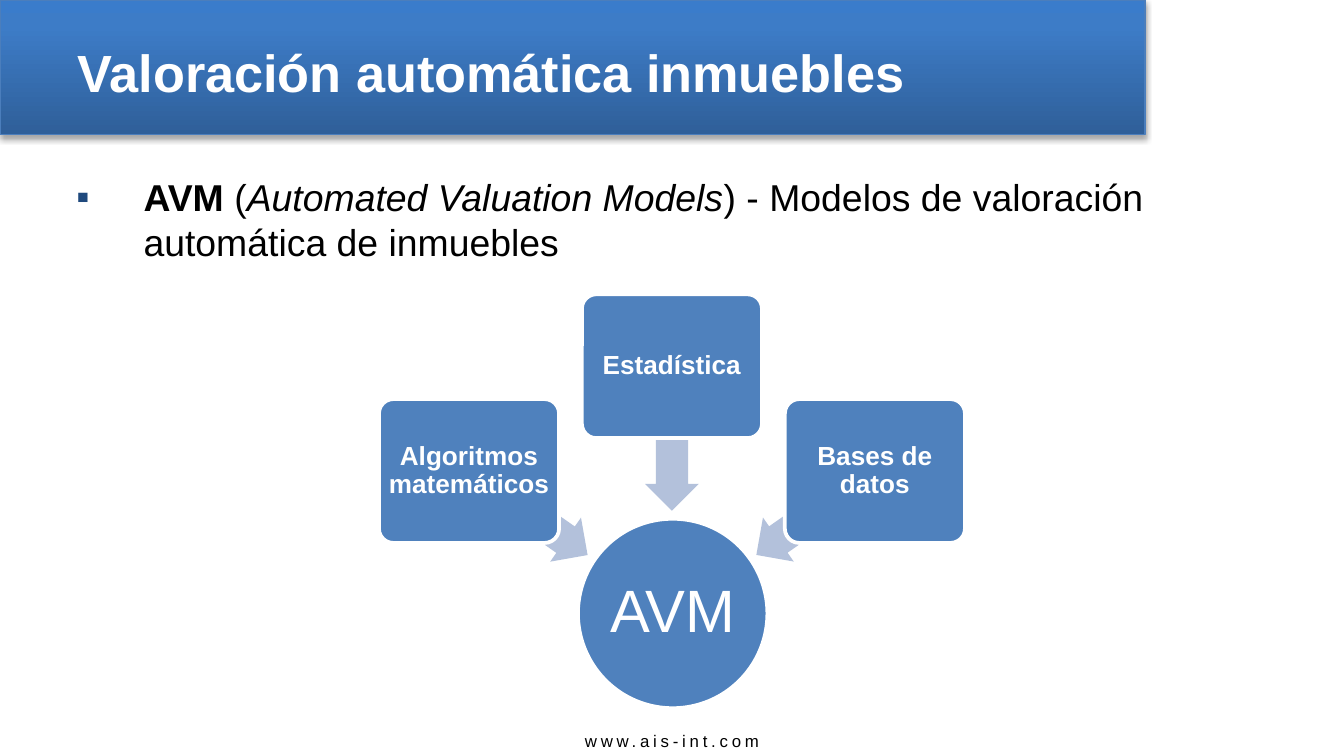
from dataclasses import dataclass

import pptx
import pptx.dml.color
import pptx.enum.shapes
import pptx.enum.text
import pptx.oxml
import pptx.oxml.ns
import pptx.util
from pptx.util import Inches

Shapes = pptx.enum.shapes.MSO_SHAPE
Align = pptx.enum.text.PP_ALIGN
Anchor = pptx.enum.text.MSO_ANCHOR

SLIDE_WIDTH = Inches(10)
SLIDE_HEIGHT = SLIDE_WIDTH * 9 // 16


@dataclass(frozen=True)
class Theme:
    font: str = "Arial"
    white: str = "FFFFFF"
    black: str = "000000"
    box: str = "4F81BD"
    arrow: str = "B3C1DB"
    bullet: str = "1F497D"
    banner_line: str = "4B7EBC"
    banner_stops: tuple = ((0, "2F5F99"), (80, "3D7CC7"), (100, "3A7CCB"))
    title_size: int = 28
    body_size: int = 20
    box_size: int = 14
    result_size: int = 32
    footer_size: int = 9


@dataclass(frozen=True)
class Source:
    """An input box of the model, with the arrow leading from it."""
    text: str
    left: float
    top: float
    arrow_left: float
    arrow_top: float
    rotation: int


THEME = Theme()
SOURCES = (
    Source("Algoritmos matemáticos", 2.82, 2.97, 3.39, 3.62, 215),
    Source("Estadística", 4.33, 2.19, 4.46, 3.06, 270),
    Source("Bases de datos", 5.84, 2.97, 5.53, 3.62, 325),
)


def rgb(color: str):
    return pptx.dml.color.RGBColor.from_string(color)


def drawing_xml(xml: str):
    """Parse one DrawingML element written with the prefix a."""
    namespace = pptx.oxml.ns.nsdecls("a")
    return pptx.oxml.parse_xml(xml.replace(" ", f" {namespace} ", 1))


def set_margins(frame, margin: float) -> None:
    for side in ("left", "right", "top", "bottom"):
        setattr(frame, f"margin_{side}", Inches(margin))


def add_run(paragraph, text: str, size: int, color: str, **formats):
    run = paragraph.add_run()
    run.text = text
    values = {"name": THEME.font, "size": pptx.util.Pt(size), **formats}
    for name, value in values.items():
        setattr(run.font, name, value)
    run.font.color.rgb = rgb(color)
    return run


def add_text_box(slide, left: float, top: float, width: float, height: float,
                 anchor=Anchor.TOP):
    """Add a wrapping text box and return its first paragraph."""
    box = slide.shapes.add_textbox(
        Inches(left), Inches(top), Inches(width), Inches(height))
    box.text_frame.word_wrap = True
    box.text_frame.vertical_anchor = anchor
    return box.text_frame.paragraphs[0]


def add_filled_shape(slide, kind, left: float, top: float, width: float,
                     height: float, fill: str, line: str | None = None,
                     line_width: float = 2):
    shape = slide.shapes.add_shape(
        kind, Inches(left), Inches(top), Inches(width), Inches(height))
    shape.shadow.inherit = False
    shape.fill.solid()
    shape.fill.fore_color.rgb = rgb(fill)
    if line:
        shape.line.color.rgb = rgb(line)
        shape.line.width = pptx.util.Pt(line_width)
    else:
        shape.line.fill.background()
    return shape


def add_label(shape, text: str, size: int, margin: float, bold: bool) -> None:
    frame = shape.text_frame
    frame.word_wrap = True
    frame.vertical_anchor = Anchor.MIDDLE
    set_margins(frame, margin)
    paragraph = frame.paragraphs[0]
    paragraph.alignment = Align.CENTER
    paragraph.line_spacing = 0.9
    add_run(paragraph, text, size, THEME.white, bold=bold)


def add_banner(slide) -> None:
    banner = add_filled_shape(slide, Shapes.RECTANGLE, 0, 0, 8.52, 1,
                              THEME.box, THEME.banner_line, 0.75)
    stops = "".join(
        f'<a:gs pos="{position * 1000}"><a:srgbClr val="{color}"/></a:gs>'
        for position, color in THEME.banner_stops)
    properties = banner.element.spPr
    solid = properties.find(pptx.oxml.ns.qn("a:solidFill"))
    properties.replace(solid, drawing_xml(
        f'<a:gradFill rotWithShape="1"><a:gsLst>{stops}</a:gsLst>'
        '<a:lin ang="16200000" scaled="0"/></a:gradFill>'))
    effects = properties.find(pptx.oxml.ns.qn("a:effectLst"))
    effects.append(drawing_xml(
        f'<a:outerShdw blurRad="{pptx.util.Pt(3.1)}" '
        f'dist="{pptx.util.Pt(1.8)}" dir="5400000" rotWithShape="0">'
        f'<a:srgbClr val="{THEME.black}"><a:alpha val="35000"/></a:srgbClr>'
        '</a:outerShdw>'))
    title = add_text_box(slide, 0.48, 0.06, 7.95, 0.94, Anchor.MIDDLE)
    add_run(title, "Valoración automática inmuebles", THEME.title_size,
            THEME.white, bold=True)


def add_definition(slide) -> None:
    paragraph = add_text_box(slide, 0.47, 1.25, 9.03, 4)
    properties = paragraph._p.get_or_add_pPr()
    properties.set("marL", str(Inches(0.5)))
    properties.set("indent", str(Inches(-0.5)))
    for bullet_xml in (
        f'<a:buClr ><a:srgbClr val="{THEME.bullet}"/></a:buClr>',
        f'<a:buFont typeface="{THEME.font}"/>',
        '<a:buChar char="▪"/>',
    ):
        properties.append(drawing_xml(bullet_xml))
    for text, formats in (
        ("AVM", {"bold": True}),
        (" (", {}),
        ("Automated Valuation Models", {"italic": True}),
        (") - Modelos de valoración automática de inmuebles", {}),
    ):
        add_run(paragraph, text, THEME.body_size, THEME.black, **formats)


def add_source(slide, source: Source) -> None:
    arrow = add_filled_shape(slide, Shapes.LEFT_ARROW, source.arrow_left,
                             source.arrow_top, 1.08, 0.4, THEME.arrow)
    arrow.rotation = source.rotation
    arrow.adjustments[0] = 0.6
    arrow.adjustments[1] = 0.5
    box = add_filled_shape(slide, Shapes.ROUNDED_RECTANGLE, source.left,
                           source.top, 1.34, 1.07, THEME.box, THEME.white)
    box.adjustments[0] = 0.1
    add_label(box, source.text, THEME.box_size, 0.03, bold=True)


def add_footer(slide) -> None:
    paragraph = add_text_box(slide, 0, 5.39, 10, 0.25)
    paragraph.alignment = Align.CENTER
    run = add_run(paragraph, "www.ais-int.com", THEME.footer_size, THEME.black)
    run._r.get_or_add_rPr().set("spc", "200")


def main() -> None:
    presentation = pptx.Presentation()
    presentation.slide_width = SLIDE_WIDTH
    presentation.slide_height = SLIDE_HEIGHT
    slide = presentation.slides.add_slide(presentation.slide_layouts[6])
    add_banner(slide)
    add_footer(slide)
    add_definition(slide)
    result = add_filled_shape(slide, Shapes.OVAL, 4.3, 3.86, 1.41, 1.41,
                              THEME.box, THEME.white)
    add_label(result, "AVM", THEME.result_size, 0.02, bold=False)
    for source in SOURCES:
        add_source(slide, source)
    presentation.save("out.pptx")


if __name__ == "__main__":
    main()
